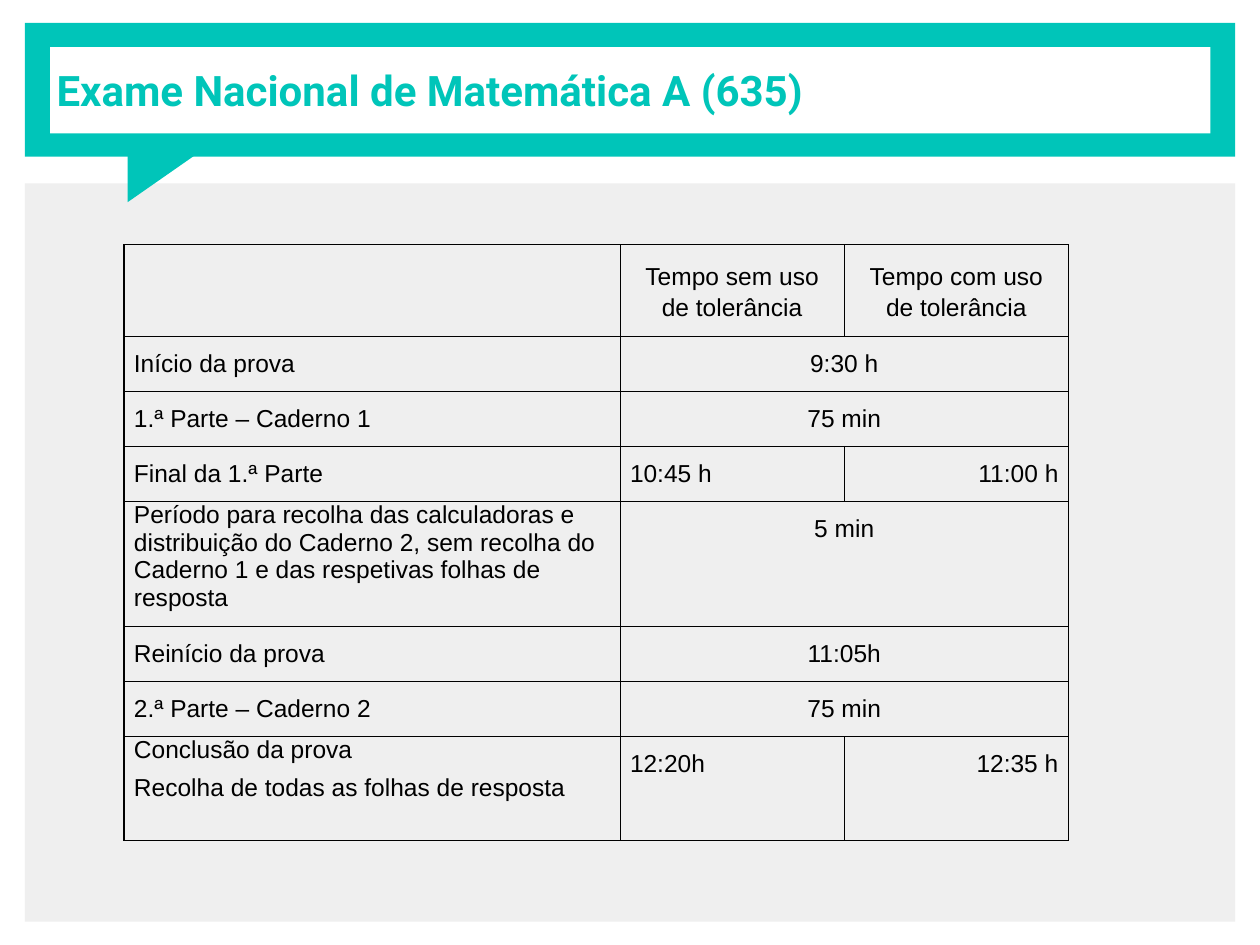
from dataclasses import dataclass

from lxml import etree
from pptx import Presentation
from pptx.dml.color import RGBColor
from pptx.enum import shapes, text
from pptx.oxml import ns
from pptx.util import Cm, Pt

TEAL = RGBColor(0x00, 0xC5, 0xB9)
PALE = RGBColor(0xEF, 0xEF, 0xEF)
WHITE = RGBColor(0xFF, 0xFF, 0xFF)
BLACK = RGBColor(0x00, 0x00, 0x00)

LEFT = text.PP_ALIGN.LEFT
CENTER = text.PP_ALIGN.CENTER
RIGHT = text.PP_ALIGN.RIGHT
JUSTIFY = text.PP_ALIGN.JUSTIFY
TOP = text.MSO_ANCHOR.TOP
MIDDLE = text.MSO_ANCHOR.MIDDLE


@dataclass(frozen=True)
class Panel:
    left: float
    top: float
    width: float
    height: float
    color: RGBColor
    kind: shapes.MSO_SHAPE = shapes.MSO_SHAPE.RECTANGLE
    rotation: float = 0


@dataclass(frozen=True)
class Stage:
    label: tuple[str, ...]
    times: tuple[str, ...]
    height: float = 1.11
    label_align: text.PP_ALIGN = JUSTIFY
    label_spacing: float = 1.5


PANELS = (
    Panel(0.5, 3.7, 24.4, 14.88, PALE),
    Panel(0.5, 0.46, 24.4, 2.7, TEAL),
    Panel(2.84, 2.59, 1.22, 1.75, TEAL, shapes.MSO_SHAPE.RIGHT_TRIANGLE, 90),
    Panel(1.01, 0.95, 23.39, 1.74, WHITE),
)

COLUMN_WIDTHS = (10.0, 4.52, 4.52)
HEADER_HEIGHT = 1.85
HEADINGS = ("Tempo sem uso de tolerância", "Tempo com uso de tolerância")

STAGES = (
    Stage(("Início da prova",), ("9:30 h",)),
    Stage(("1.ª Parte – Caderno 1",), ("75 min",)),
    Stage(("Final da 1.ª Parte",), ("10:45 h", "11:00 h")),
    Stage(
        (
            "Período para recolha das calculadoras e distribuição do Caderno 2, "
            "sem recolha do Caderno 1 e das respetivas folhas de resposta",
        ),
        ("5 min",),
        2.52,
        LEFT,
        1.0,
    ),
    Stage(("Reinício da prova",), ("11:05h",)),
    Stage(("2.ª Parte – Caderno 2",), ("75 min",)),
    Stage(
        ("Conclusão da prova", "Recolha de todas as folhas de resposta"),
        ("12:20h", "12:35 h"),
        2.1,
        JUSTIFY,
        1.0,
    ),
)


def draw_panel(slide, panel: Panel) -> None:
    shape = slide.shapes.add_shape(
        panel.kind, Cm(panel.left), Cm(panel.top), Cm(panel.width), Cm(panel.height)
    )
    shape.rotation = panel.rotation
    shape.shadow.inherit = False
    shape.fill.solid()
    shape.fill.fore_color.rgb = panel.color
    shape.line.fill.background()


def write_title(slide, wording: str) -> None:
    title = slide.shapes.title
    title.left, title.top = Cm(0.89), Cm(0.46)
    title.width, title.height = Cm(23.5), Cm(2.7)
    frame = title.text_frame
    frame.auto_size = text.MSO_AUTO_SIZE.NONE
    frame.word_wrap = True
    frame.vertical_anchor = MIDDLE
    frame.margin_left = frame.margin_right = Cm(0.25)
    frame.margin_top = frame.margin_bottom = Cm(0.25)
    paragraph = frame.paragraphs[0]
    paragraph.alignment = LEFT
    run = paragraph.add_run()
    run.text = wording
    run.font.name = "Roboto"
    run.font.size = Pt(24)
    run.font.bold = True
    run.font.color.rgb = TEAL
    title.element.getparent().append(title.element)


def outline_cell(cell) -> None:
    properties = cell._tc.get_or_add_tcPr()
    for position, side in enumerate(("lnL", "lnR", "lnT", "lnB")):
        border = etree.Element(ns.qn(f"a:{side}"), w=str(Pt(0.75)))
        fill = etree.SubElement(border, ns.qn("a:solidFill"))
        etree.SubElement(fill, ns.qn("a:srgbClr"), val=str(BLACK))
        properties.insert(position, border)


def write_cell(
    cell,
    lines: tuple[str, ...],
    align: text.PP_ALIGN,
    spacing: float,
    anchor: text.MSO_ANCHOR = TOP,
) -> None:
    cell.vertical_anchor = anchor
    frame = cell.text_frame
    for index, line in enumerate(lines):
        paragraph = frame.add_paragraph() if index else frame.paragraphs[0]
        paragraph.alignment = align
        paragraph.line_spacing = spacing
        paragraph.space_after = Pt(6)
        run = paragraph.add_run()
        run.text = line
        run.font.name = "Arial"
        run.font.size = Pt(14)
        run.font.color.rgb = BLACK


def draw_schedule(slide) -> None:
    heights = (HEADER_HEIGHT, *(stage.height for stage in STAGES))
    schedule = slide.shapes.add_table(
        len(heights),
        len(COLUMN_WIDTHS),
        Cm(2.5),
        Cm(4.93),
        Cm(sum(COLUMN_WIDTHS)),
        Cm(sum(heights)),
    ).table
    schedule.first_row = False
    schedule.horz_banding = False
    for column, width in zip(schedule.columns, COLUMN_WIDTHS):
        column.width = Cm(width)
    for row, height in zip(schedule.rows, heights):
        row.height = Cm(height)
    for cell in schedule.iter_cells():
        cell.fill.background()
        cell.margin_left = cell.margin_right = Cm(0.2)
        cell.margin_top = cell.margin_bottom = 0
        outline_cell(cell)

    for column, heading in enumerate(HEADINGS, 1):
        write_cell(schedule.cell(0, column), (heading,), CENTER, 1.15, MIDDLE)
    for row, stage in enumerate(STAGES, 1):
        write_cell(
            schedule.cell(row, 0), stage.label, stage.label_align, stage.label_spacing
        )
        shared = len(stage.times) == 1
        if shared:
            schedule.cell(row, 1).merge(schedule.cell(row, 2))
        aligns = (CENTER,) if shared else (LEFT, RIGHT)
        for column, (time, align) in enumerate(zip(stage.times, aligns), 1):
            write_cell(schedule.cell(row, column), (time,), align, 1.5)


def main() -> None:
    deck = Presentation()
    deck.slide_width, deck.slide_height = Cm(25.4), Cm(19.05)
    slide = deck.slides.add_slide(deck.slide_layouts[5])
    for panel in PANELS:
        draw_panel(slide, panel)
    write_title(slide, "Exame Nacional de Matemática A (635)")
    draw_schedule(slide)
    deck.save("out.pptx")


if __name__ == "__main__":
    main()
